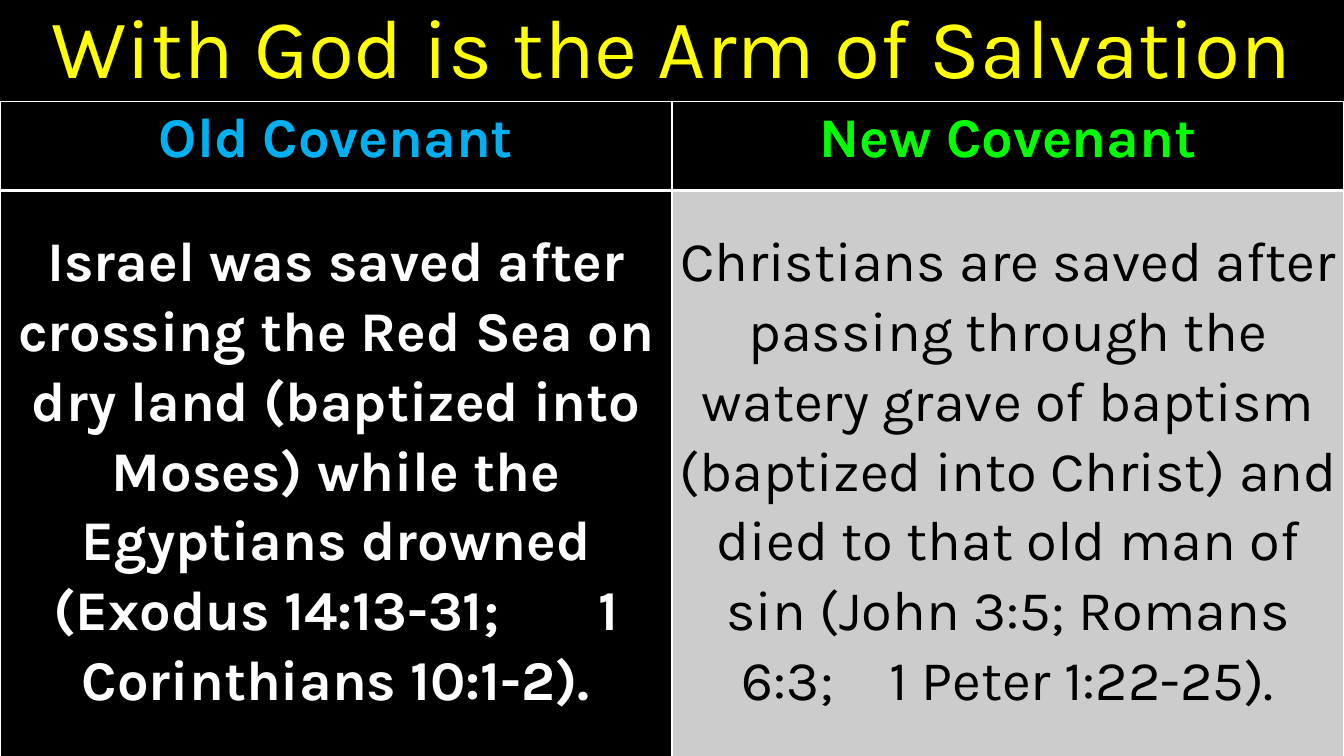
"""Build a slide that compares salvation under the Old and New Covenants."""
from lxml import etree
from pptx import Presentation
from pptx.dml.color import RGBColor
from pptx.enum import text
from pptx.oxml import ns
from pptx.util import Pt

BLACK = RGBColor(0x00, 0x00, 0x00)
WHITE = RGBColor(0xFF, 0xFF, 0xFF)
YELLOW = RGBColor(0xFF, 0xFF, 0x00)
BLUE = RGBColor(0x00, 0xB0, 0xF0)
GREEN = RGBColor(0x00, 0xFF, 0x00)
GREY = RGBColor(0xCC, 0xCC, 0xCC)
GAP_MARK = "|"


def write(frame, words, size=40, color=WHITE, bold=False, spacing=1.07, gap=0):
    frame.word_wrap = True
    paragraph = frame.paragraphs[0]
    paragraph.alignment = text.PP_ALIGN.CENTER
    paragraph.line_spacing = spacing
    before, mark, after = words.partition(GAP_MARK)
    for part in (before, " ", after) if mark else (words,):
        run = paragraph.add_run()
        run.text = part
        run.font.name = "Karla"
        run.font.size = Pt(size)
        run.font.bold = bold
        run.font.color.rgb = color
        if mark and part == " ":
            run.font._element.set("spc", str(gap * 100))


def draw_border(cell, side, width):
    line = etree.SubElement(cell._tc.get_or_add_tcPr(), ns.qn(f"a:{side}"), w=str(Pt(width)))
    fill = etree.SubElement(line, ns.qn("a:solidFill"))
    etree.SubElement(fill, ns.qn("a:srgbClr"), val=str(WHITE))


deck = Presentation()
deck.slide_width, deck.slide_height = Pt(960), Pt(540)
slide = deck.slides.add_slide(deck.slide_layouts[5])
slide.background.fill.solid()
slide.background.fill.fore_color.rgb = BLACK

heading = slide.shapes.title
heading.left, heading.top, heading.width, heading.height = Pt(0), Pt(0), Pt(960), Pt(72.75)
heading.text_frame.auto_size = text.MSO_AUTO_SIZE.NONE
heading.text_frame.vertical_anchor = text.MSO_ANCHOR.MIDDLE
write(heading.text_frame, "With God is the Arm of Salvation", size=60, color=YELLOW, spacing=0.9)

covenants = [
    [
        ("Old Covenant", BLACK, dict(color=BLUE, bold=True)),
        ("New Covenant", BLACK, dict(color=GREEN, bold=True)),
    ],
    [
        ("Israel was saved after crossing the Red Sea on dry land (baptized into Moses) "
         "while the Egyptians drowned (Exodus 14:13-31;|1 Corinthians 10:1-2).",
         BLACK, dict(bold=True, gap=60)),
        ("Christians are saved after passing through the watery grave of baptism "
         "(baptized into Christ) and died to that old man of sin "
         "(John 3:5; Romans 6:3;|1 Peter 1:22-25).",
         GREY, dict(color=BLACK, gap=30)),
    ],
]
row_heights = [63.36, 415.44]
top_margins = [0, 25]
edge_widths = [1, 3, 1]

comparison = slide.shapes.add_table(2, 2, Pt(0), Pt(72.75), Pt(960), Pt(sum(row_heights))).table
for column in comparison.columns:
    column.width = Pt(480)
for row, entries in enumerate(covenants):
    comparison.rows[row].height = Pt(row_heights[row])
    for column, (words, background, style) in enumerate(entries):
        cell = comparison.cell(row, column)
        cell.margin_left = cell.margin_right = Pt(5)
        cell.margin_top, cell.margin_bottom = Pt(top_margins[row]), Pt(0)
        write(cell.text_frame, words, **style)
        for side, width in zip(("lnL", "lnR", "lnT", "lnB"), (1, 1, *edge_widths[row:row + 2])):
            draw_border(cell, side, width)
        cell.fill.solid()
        cell.fill.fore_color.rgb = background

deck.save("out.pptx")
